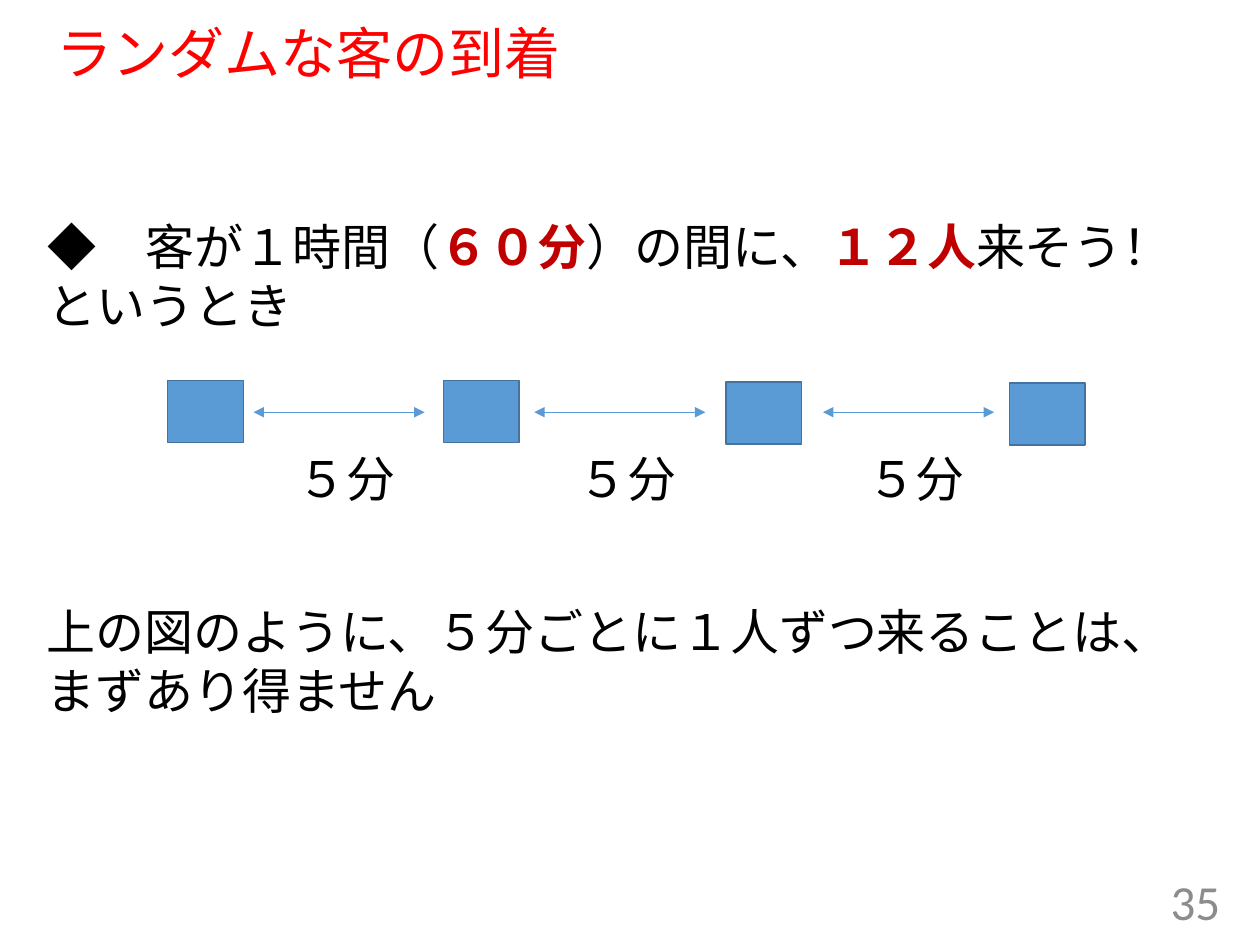
from lxml.etree import SubElement
from pptx import Presentation
from pptx.dml.color import RGBColor
from pptx.enum.shapes import MSO_CONNECTOR as Connector, MSO_SHAPE as Shape
from pptx.enum.text import MSO_ANCHOR as Anchor, MSO_AUTO_SIZE as AutoSize, PP_ALIGN as Align
from pptx.oxml.ns import qn
from pptx.util import Cm, Pt

COLORS = {
    "title": "FF0000",
    "text": "000000",
    "emphasis": "C00000",
    "number": "8C8C8C",
    "customer": "5B9BD5",
    "outline": "43739E",
}
JAPANESE = "Noto Sans CJK JP"
LATIN = "Calibri"


class SlideBuilder:
    text_size = 28

    def __init__(self, slide):
        self.slide = slide

    def color(self, name):
        return RGBColor.from_string(COLORS[name])

    def place(self, shape, left, top, width, height):
        shape.left, shape.top = Cm(left), Cm(top)
        shape.width, shape.height = Cm(width), Cm(height)

    def format_run(self, run, color="text", size=text_size, font=JAPANESE, bold=False):
        run.font.size = Pt(size)
        run.font.bold = bold
        run.font.name = font
        run.font.color.rgb = self.color(color)
        SubElement(run.font._element, qn("a:ea")).set("typeface", JAPANESE)

    def title(self, text, *box):
        shape = self.slide.shapes.title
        self.place(shape, *box)
        frame = shape.text_frame
        frame.text = text
        frame.auto_size = AutoSize.NONE
        frame.vertical_anchor = Anchor.MIDDLE
        paragraph = frame.paragraphs[0]
        paragraph.alignment = Align.LEFT
        paragraph.line_spacing = 0.9
        self.format_run(paragraph.runs[0], "title", 32, LATIN)

    def body(self, parts, *box):
        shape = self.slide.placeholders[1]
        self.place(shape, *box)
        shape.text_frame.auto_size = AutoSize.NONE
        paragraph = shape.text_frame.paragraphs[0]
        properties = paragraph._p.get_or_add_pPr()
        properties.set("marL", "0")
        properties.set("indent", "0")
        SubElement(properties, qn("a:buNone"))
        paragraph.space_before = Pt(0)
        for text, emphasized in parts:
            run = paragraph.add_run()
            run.text = text
            self.format_run(run, "emphasis" if emphasized else "text", bold=emphasized)

    def text(self, text, *box, wrap=True, align=Align.LEFT, anchor=Anchor.TOP, **style):
        shape = self.slide.shapes.add_textbox(*map(Cm, box))
        frame = shape.text_frame
        frame.text = text
        frame.word_wrap = wrap
        frame.vertical_anchor = anchor
        paragraph = frame.paragraphs[0]
        paragraph.alignment = align
        self.format_run(paragraph.runs[0], **style)

    def customer(self, left, top):
        shape = self.slide.shapes.add_shape(Shape.RECTANGLE, Cm(left), Cm(top), Cm(1.53), Cm(1.25))
        shape.shadow.inherit = False
        shape.fill.solid()
        shape.fill.fore_color.rgb = self.color("customer")
        shape.line.color.rgb = self.color("outline")
        shape.line.width = Pt(1)

    def interval(self, left, top, length):
        arrow = self.slide.shapes.add_connector(
            Connector.STRAIGHT, Cm(left), Cm(top), Cm(left + length), Cm(top))
        arrow.line.color.rgb = self.color("customer")
        arrow.line.width = Pt(0.5)
        line = arrow.line._get_or_add_ln()
        for end in ("a:headEnd", "a:tailEnd"):
            SubElement(line, qn(end)).set("type", "triangle")
        SubElement(arrow._element.spPr, qn("a:effectLst"))


def main():
    presentation = Presentation()
    presentation.slide_width, presentation.slide_height = Cm(25.4), Cm(19.05)
    builder = SlideBuilder(presentation.slides.add_slide(presentation.slide_layouts[1]))

    builder.title("ランダムな客の到着", 0.89, 0.48, 23.5, 1.3)
    builder.body([
        ("◆　客が１時間（", False),
        ("６０分", True),
        ("）の間に、", False),
        ("１２人", True),
        ("来そう！　というとき", False),
    ], 0.71, 4.24, 24.31, 10.52)
    builder.text("35", 19.13, 17.65, 5.72, 1.02, align=Align.RIGHT, anchor=Anchor.MIDDLE,
                 color="number", font=LATIN)

    for left in (5.11, 10.77, 16.59):
        builder.interval(left, 8.31, 3.45)
        builder.text("５分", left + 0.64, 8.92, 2.51, 1.45, wrap=False)
    for left, top in ((3.38, 7.67), (8.94, 7.67), (14.63, 7.7), (20.35, 7.72)):
        builder.customer(left, top)

    builder.text("上の図のように、５分ごとに１人ずつ来ることは、まずあり得ません",
                 0.69, 12.01, 23.24, 2.64)
    presentation.save("out.pptx")


if __name__ == "__main__":
    main()
